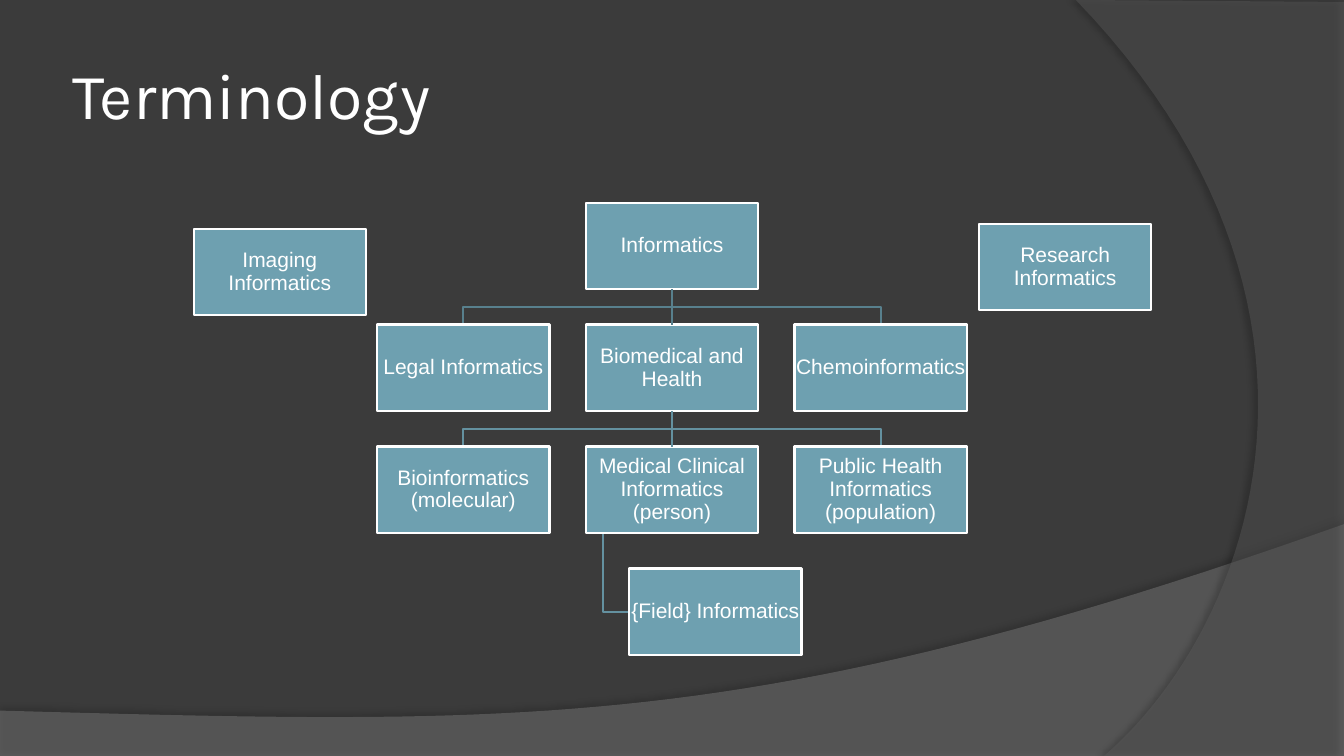
from lxml.etree import SubElement
from pptx import Presentation
from pptx.dml.color import RGBColor
from pptx.enum.shapes import MSO_CONNECTOR, MSO_SHAPE
from pptx.enum.text import MSO_ANCHOR, PP_ALIGN
from pptx.oxml.ns import qn
from pptx.util import Inches, Pt

COLORS = {
    "background": "3B3B3B", "wave": "7F7F7F", "arc": "5E5E5E", "shadow": "000000",
    "box": "6EA0B0", "white": "FFFFFF", "top_link": "58808D", "link": "6491A0",
}
BOX_WIDTH, BOX_HEIGHT = 1.71, 0.86
COLUMNS = [3.74 + 2.07 * i for i in range(3)]
ROWS = [2.01 + 1.21 * i for i in range(4)]


def curve(start, first, second, end, steps=48):
    """Points along a cubic curve, both ends included."""
    points = []
    for i in range(steps + 1):
        t = i / steps
        weights = ((1 - t) ** 3, 3 * t * (1 - t) ** 2, 3 * t * t * (1 - t), t ** 3)
        points.append(tuple(
            sum(w * p[axis] for w, p in zip(weights, (start, first, second, end)))
            for axis in (0, 1)))
    return points


class SlideBuilder:
    def __init__(self, page):
        self.page = page
        self.shapes = page.shapes
        page.background.fill.solid()
        page.background.fill.fore_color.rgb = self.color("background")

    def color(self, name):
        return RGBColor.from_string(COLORS[name])

    def outline(self, points, close):
        (x, y), *rest = [(Inches(x), Inches(y)) for x, y in points]
        builder = self.shapes.build_freeform(x, y, scale=1.0)
        builder.add_line_segments(rest, close=close)
        shape = builder.convert_to_shape()
        shape.shadow.inherit = False
        return shape

    def stroke(self, line, name):
        line.color.rgb = self.color(name)
        line.width = Pt(1.5)

    def backdrop(self, points, name, opacity, shadow_opacity, distance, angle):
        shape = self.outline(points, close=True)
        shape.fill.solid()
        shape.fill.fore_color.rgb = self.color(name)
        shape.line.fill.background()
        properties = shape._element.spPr
        fill_color = properties.find(qn("a:solidFill")).find(qn("a:srgbClr"))
        SubElement(fill_color, qn("a:alpha"), val=str(opacity * 1000))
        shadow = SubElement(properties.find(qn("a:effectLst")), qn("a:outerShdw"),
                            blurRad=str(Pt(4)), dist=str(Pt(distance)),
                            dir=str(angle * 60000), rotWithShape="0")
        shadow_color = SubElement(shadow, qn("a:srgbClr"), val=COLORS["shadow"])
        SubElement(shadow_color, qn("a:alpha"), val=str(shadow_opacity * 1000))

    def label(self, shape, text, size, font, inset):
        frame = shape.text_frame
        frame.word_wrap = True
        frame.vertical_anchor = MSO_ANCHOR.MIDDLE
        frame.margin_left = frame.margin_right = Inches(inset)
        frame.margin_top = frame.margin_bottom = Inches(inset)
        para = frame.paragraphs[0]
        para.text = text
        para.font.size = Pt(size)
        para.font.name = font
        para.font.color.rgb = self.color("white")
        return para

    def title(self, text):
        box = self.shapes.add_textbox(Inches(0.67), Inches(0.3), Inches(10.89), Inches(1.25))
        self.label(box, text, 46, "Karla", 0.05)

    def box(self, text, left, top):
        box = self.shapes.add_shape(MSO_SHAPE.RECTANGLE, Inches(left), Inches(top),
                                    Inches(BOX_WIDTH), Inches(BOX_HEIGHT))
        box.shadow.inherit = False
        box.fill.solid()
        box.fill.fore_color.rgb = self.color("box")
        self.stroke(box.line, "white")
        para = self.label(box, text, 15, "Arial", 0.01)
        para.alignment = PP_ALIGN.CENTER
        para.line_spacing = 0.9
        return box

    def elbow(self, points, name):
        shape = self.outline(points, close=False)
        shape.fill.background()
        self.stroke(shape.line, name)

    def straight(self, parent, child, name):
        link = self.shapes.add_connector(MSO_CONNECTOR.STRAIGHT, 0, 0, 0, 0)
        link.begin_connect(parent, 2)
        link.end_connect(child, 0)
        self.stroke(link.line, name)
        SubElement(link._element.spPr, qn("a:effectLst"))


def main():
    deck = Presentation()
    deck.slide_width, deck.slide_height = Inches(13.33), Inches(7.5)
    page = deck.slides.add_slide(deck.slide_layouts[6])
    slide = SlideBuilder(page)

    # Backdrop curves
    wave = [(0, 7.05), (0, 7.51), (13.33, 7.51)]
    wave += curve((13.33, 5.2), (7.45, 7.29), (5.21, 7.19), (0, 7.05))
    slide.backdrop(wave, "wave", 45, 35, 3.5, 270)
    arc = [(13.33, 0.02), (13.33, 7.5)]
    arc += curve((10.95, 7.5), (12.46, 6.19), (13.57, 3), (10.67, 0))
    slide.backdrop(arc, "arc", 40, 45, 4, 180)

    slide.title("Terminology")

    # Elbow links from the middle box of each row to the outer boxes below
    middle = COLUMNS[1] + BOX_WIDTH / 2
    link_names = ("top_link", "link")
    for row, name in enumerate(link_names):
        start, end = ROWS[row] + BOX_HEIGHT, ROWS[row + 1]
        bend = (start + end) / 2
        for column in (COLUMNS[0], COLUMNS[2]):
            center = column + BOX_WIDTH / 2
            slide.elbow([(middle, start), (middle, bend), (center, bend), (center, end)], name)

    # Side link to the field box
    field_left, field_middle = 6.24, ROWS[3] + BOX_HEIGHT / 2
    slide.elbow([(5.98, ROWS[2] + BOX_HEIGHT), (5.98, field_middle),
                 (field_left, field_middle)], "link")

    # Boxes of the tree
    root = slide.box("Informatics", COLUMNS[1], ROWS[0])
    branches = [
        ("Legal Informatics", "Biomedical and Health", "Chemoinformatics"),
        ("Bioinformatics (molecular)", "Medical Clinical Informatics (person)",
         "Public Health Informatics (population)"),
    ]
    trunk = [root]
    for top, labels in zip(ROWS[1:], branches):
        boxes = [slide.box(text, left, top) for text, left in zip(labels, COLUMNS)]
        trunk.append(boxes[1])
    slide.box("{Field} Informatics", field_left, ROWS[3])

    # Boxes outside the tree
    slide.box("Imaging Informatics", 1.92, 2.27)
    slide.box("Research Informatics", 9.71, 2.22)

    # Straight links down the trunk
    for parent, child, name in zip(trunk, trunk[1:], link_names):
        slide.straight(parent, child, name)

    deck.save("out.pptx")


if __name__ == "__main__":
    main()
